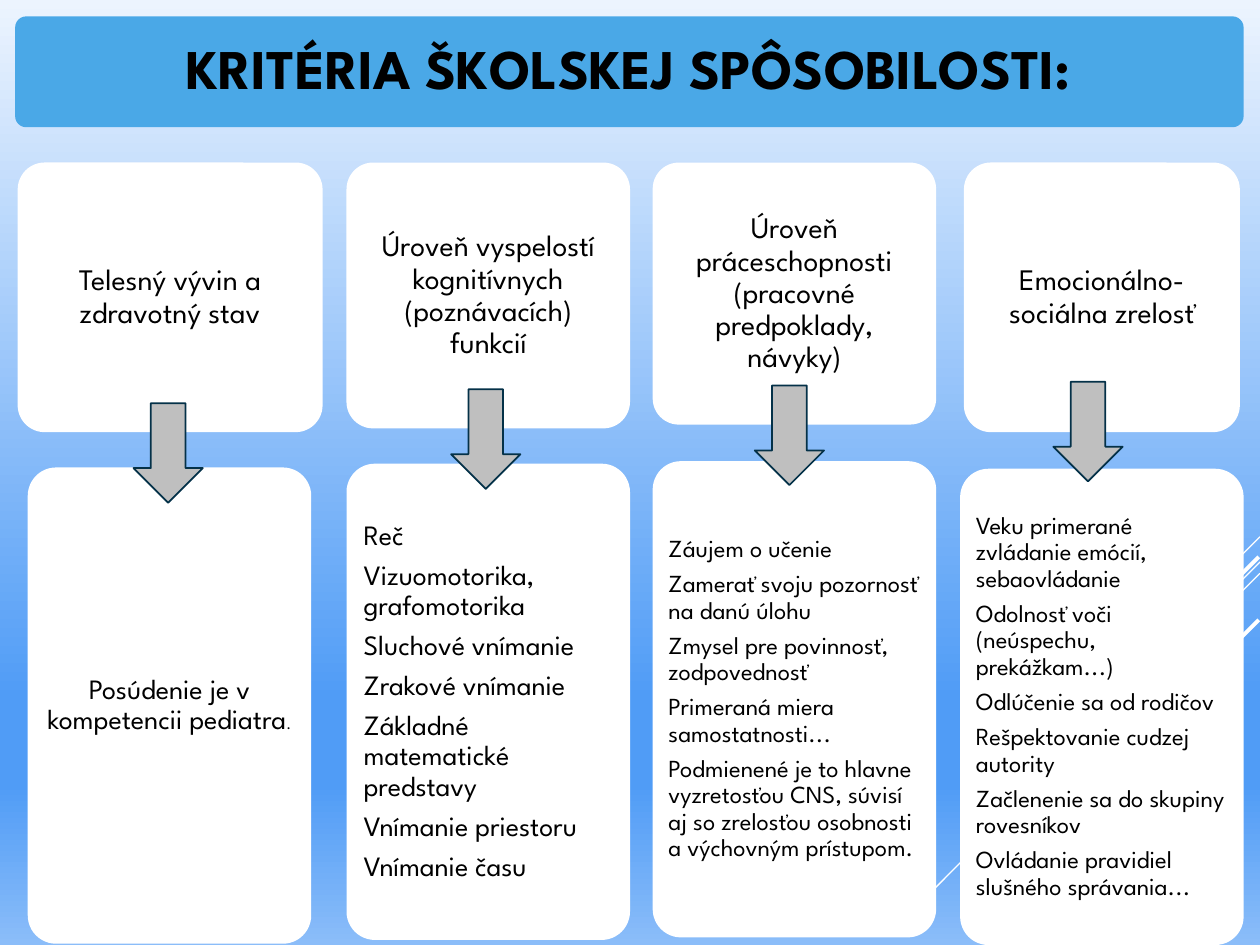
"""Build the slide on the criteria of school readiness."""
from copy import deepcopy
from dataclasses import dataclass

from pptx import Presentation
from pptx.dml.color import RGBColor
from pptx.enum.shapes import MSO_CONNECTOR as Connector, MSO_SHAPE as Shape
from pptx.enum.text import MSO_ANCHOR as Anchor, PP_ALIGN as Align
from pptx.oxml.ns import qn
from pptx.util import Inches, Pt

FONT = "League Spartan"
BLACK = RGBColor(0x00, 0x00, 0x00)
WHITE = RGBColor(0xFF, 0xFF, 0xFF)
BANNER_BLUE = RGBColor(0x4A, 0xA8, 0xE7)
ARROW_GREY = RGBColor(0xBF, 0xBF, 0xBF)
ARROW_EDGE = RGBColor(0x04, 0x31, 0x48)
SKY = [(0, "ECF4FE"), (74, "509CF6"), (83, "509CF6"), (100, "8BBDF9")]

CARD_TOP = 1.29
DETAIL_WIDTH, DETAIL_HEIGHT = 2.25, 3.78
ARROW_WIDTH, ARROW_HEIGHT = 0.55, 0.79


@dataclass(frozen=True)
class Streak:
    x1: float
    y1: float
    x2: float
    y2: float
    weight: float = 0.75


@dataclass(frozen=True)
class Criterion:
    heading: str
    left: float
    width: float
    height: float
    details: list[str]
    detail_left: float
    detail_top: float
    arrow_left: float
    arrow_top: float
    size: float
    inset: float = 0.07
    align: Align = Align.LEFT
    full_stop: str = ""


STREAKS = [
    Streak(10, 4.26, 9.17, 5.09),
    Streak(10, 4.46, 7.3, 7.17),
    Streak(10, 4.55, 8.28, 6.27),
    Streak(9.99, 4.42, 8.42, 5.99, 2.25),
    Streak(9.99, 4.92, 8.85, 6.06, 2.25),
]

CRITERIA = [
    Criterion("Telesný vývin a zdravotný stav", 0.14, 2.42, 2.14,
              ["Posúdenie je v kompetencii pediatra"],
              0.22, 3.71, 1.06, 3.2, 16, align=Align.CENTER, full_stop="."),
    Criterion("Úroveň vyspelostí kognitívnych (poznávacích) funkcií", 2.75, 2.25, 2.11,
              ["Reč", "Vizuomotorika, grafomotorika", "Sluchové vnímanie",
               "Zrakové vnímanie", "Základné matematické predstavy",
               "Vnímanie priestoru", "Vnímanie času"],
              2.75, 3.68, 3.58, 3.09, 16),
    Criterion("Úroveň práceschopnosti (pracovné predpoklady, návyky)", 5.18, 2.25, 2.08,
              ["Záujem o učenie", "Zamerať svoju pozornosť na danú úlohu",
               "Zmysel pre povinnosť, zodpovednosť",
               "Primeraná miera samostatnosti...",
               "Podmienené je to hlavne vyzretosťou CNS, súvisí aj so "
               "zrelosťou osobnosti a výchovným prístupom."],
              5.18, 3.66, 5.99, 3.06, 14, inset=0.06),
    Criterion("Emocionálno-sociálna zrelosť", 7.65, 2.19, 2.14,
              ["Veku primerané zvládanie emócií, sebaovládanie",
               "Odolnosť voči (neúspechu, prekážkam...)", "Odlúčenie sa od rodičov",
               "Rešpektovanie cudzej autority", "Začlenenie sa do skupiny rovesníkov",
               "Ovládanie pravidiel slušného správania..."],
              7.62, 3.72, 8.36, 3.03, 14, inset=0.06),
]


def paint_sky(slide) -> None:
    """Fill the background with the vertical sky gradient."""
    fill = slide.background.fill
    fill.gradient()
    fill.gradient_angle = 270
    first = fill.gradient_stops[0]
    first.color.rgb = WHITE
    stop_list = slide.element.find(".//" + qn("a:gsLst"))
    pattern = deepcopy(stop_list[0])
    for stop in list(stop_list):
        stop_list.remove(stop)
    for position, colour in SKY:
        stop = deepcopy(pattern)
        stop.set("pos", str(position * 1000))
        stop[0].set("val", colour)
        stop_list.append(stop)


def add_streak(slide, streak: Streak) -> None:
    """Draw one white diagonal line."""
    line = slide.shapes.add_connector(
        Connector.STRAIGHT, Inches(streak.x1), Inches(streak.y1),
        Inches(streak.x2), Inches(streak.y2))
    line.line.color.rgb = WHITE
    line.line.width = Pt(streak.weight)
    properties = line.element.spPr
    properties.append(properties.makeelement(qn("a:effectLst"), {}))


def add_figure(slide, kind: Shape, left: float, top: float,
               width: float, height: float, fill: RGBColor):
    """Add a flat, borderless preset shape."""
    figure = slide.shapes.add_shape(
        kind, Inches(left), Inches(top), Inches(width), Inches(height))
    figure.shadow.inherit = False
    figure.fill.solid()
    figure.fill.fore_color.rgb = fill
    figure.line.fill.background()
    return figure


def add_card(slide, left: float, top: float, width: float, height: float,
             fill: RGBColor = WHITE):
    """Add a card with slightly rounded corners."""
    card = add_figure(slide, Shape.ROUNDED_RECTANGLE, left, top, width, height, fill)
    card.adjustments[0] = 0.1
    return card


def write(card, lines: list[str], *, size: float, bold: bool = False,
          align: Align = Align.CENTER, inset: float = 0.07, full_stop: str = "") -> None:
    """Write paragraphs into a card, with an optional small closing mark."""
    frame = card.text_frame
    frame.word_wrap = True
    frame.vertical_anchor = Anchor.MIDDLE
    frame.margin_left = frame.margin_right = Inches(inset)
    frame.margin_top = frame.margin_bottom = Inches(inset)
    for index, line in enumerate(lines):
        paragraph = frame.add_paragraph() if index else frame.paragraphs[0]
        paragraph.alignment = align
        paragraph.line_spacing = 0.9
        paragraph.space_after = Pt(size * 0.35)
        pieces = [(line, size)]
        if full_stop and index == len(lines) - 1:
            pieces.append((full_stop, 9))
        for text, points in pieces:
            run = paragraph.add_run()
            run.text = text
            run.font.name = FONT
            run.font.size = Pt(points)
            run.font.bold = bold
            run.font.color.rgb = BLACK


def add_criterion(slide, item: Criterion) -> None:
    """Draw a heading card and its detail card."""
    heading = add_card(slide, item.left, CARD_TOP, item.width, item.height)
    write(heading, [item.heading], size=17)
    details = add_card(slide, item.detail_left, item.detail_top,
                       DETAIL_WIDTH, DETAIL_HEIGHT)
    write(details, item.details, size=item.size, align=item.align,
          inset=item.inset, full_stop=item.full_stop)


def add_arrow(slide, item: Criterion) -> None:
    """Draw the arrow from heading to details."""
    arrow = add_figure(slide, Shape.DOWN_ARROW, item.arrow_left, item.arrow_top,
                       ARROW_WIDTH, ARROW_HEIGHT, ARROW_GREY)
    arrow.line.color.rgb = ARROW_EDGE
    arrow.line.width = Pt(1)


def main() -> None:
    """Compose and save the slide."""
    deck = Presentation()
    deck.slide_width, deck.slide_height = Inches(10), Inches(7.5)
    slide = deck.slides.add_slide(deck.slide_layouts[6])
    paint_sky(slide)
    for streak in STREAKS:
        add_streak(slide, streak)
    banner = add_card(slide, 0.12, 0.13, 9.75, 0.88, BANNER_BLUE)
    write(banner, ["KRITÉRIA ŠKOLSKEJ SPÔSOBILOSTI:"], size=32, bold=True, inset=0.13)
    for item in CRITERIA:
        add_criterion(slide, item)
    for item in CRITERIA:
        add_arrow(slide, item)
    deck.save("out.pptx")


if __name__ == "__main__":
    main()
